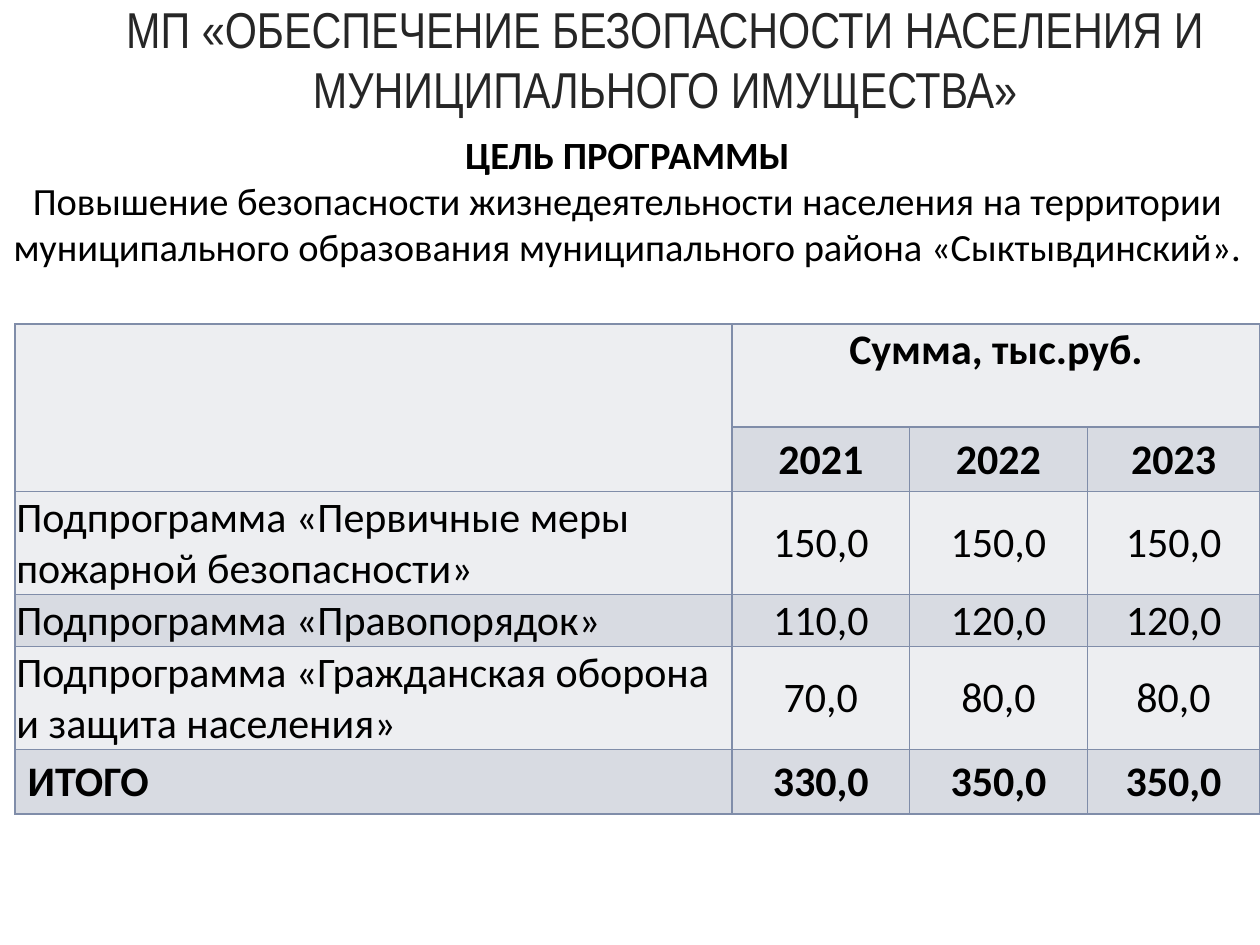
from dataclasses import dataclass

from lxml import etree
from pptx import Presentation
from pptx.dml.color import RGBColor
from pptx.enum.text import MSO_ANCHOR, PP_ALIGN
from pptx.oxml.ns import qn
from pptx.util import Inches, Pt

LEFT, CENTER = PP_ALIGN.LEFT, PP_ALIGN.CENTER
TOP, MIDDLE, BOTTOM = MSO_ANCHOR.TOP, MSO_ANCHOR.MIDDLE, MSO_ANCHOR.BOTTOM


@dataclass(frozen=True)
class Theme:
    title_font: str = "Arial Narrow"
    body_font: str = "Calibri"
    title_size: float = 28.8
    goal_size: float = 22
    table_size: float = 24
    title_color: str = "262626"
    text_color: str = "000000"
    border_color: str = "808DA9"
    border_width: float = 1
    bands: tuple[str, str] = ("EDEEF1", "D8DBE2")


@dataclass(frozen=True)
class Line:
    text: str
    font: str
    size: float
    color: str
    bold: bool = False
    align: PP_ALIGN = CENTER


@dataclass(frozen=True)
class BudgetRow:
    label: str
    amounts: tuple[str, str, str]
    height: float
    bold: bool = False


THEME = Theme()
COLUMN_WIDTHS = (5.69, 1.41, 1.41, 1.37)
TABLE_TITLE = "Сумма, тыс.руб."
TITLE_HEIGHT = 0.82
ROWS = (
    BudgetRow("", ("2021", "2022", "2023"), 0.51, bold=True),
    BudgetRow("Подпрограмма «Первичные меры пожарной безопасности»",
              ("150,0", "150,0", "150,0"), 0.82),
    BudgetRow("Подпрограмма «Правопорядок»", ("110,0", "120,0", "120,0"), 0.41),
    BudgetRow("Подпрограмма «Гражданская оборона и защита населения»",
              ("70,0", "80,0", "80,0"), 0.82),
    BudgetRow("ИТОГО", ("330,0", "350,0", "350,0"), 0.51, bold=True),
)


def write_line(paragraph, line: Line) -> None:
    paragraph.text = line.text
    paragraph.alignment = line.align
    font = paragraph.font
    font.name, font.size, font.bold = line.font, Pt(line.size), line.bold
    font.color.rgb = RGBColor.from_string(line.color)


def add_text(slide, box: tuple[float, ...], lines: list[Line], anchor: MSO_ANCHOR) -> None:
    frame = slide.shapes.add_textbox(*map(Inches, box)).text_frame
    frame.word_wrap = True
    frame.vertical_anchor = anchor
    for index, line in enumerate(lines):
        write_line(frame.add_paragraph() if index else frame.paragraphs[0], line)


def style_cell(cell, fill: str) -> None:
    properties = cell._tc.get_or_add_tcPr()
    for side in ("lnL", "lnR", "lnT", "lnB"):
        border = etree.SubElement(properties, qn(f"a:{side}"), w=str(Pt(THEME.border_width)))
        solid = etree.SubElement(border, qn("a:solidFill"))
        etree.SubElement(solid, qn("a:srgbClr"), val=THEME.border_color)
    cell.fill.solid()
    cell.fill.fore_color.rgb = RGBColor.from_string(fill)


def fill_cell(cell, text: str, bold: bool, align: PP_ALIGN = CENTER,
              anchor: MSO_ANCHOR = MIDDLE) -> None:
    cell.margin_left = cell.margin_right = cell.margin_top = Inches(0.01)
    cell.margin_bottom = 0
    cell.vertical_anchor = anchor
    write_line(cell.text_frame.paragraphs[0],
               Line(text, THEME.body_font, THEME.table_size, THEME.text_color, bold, align))


def add_budget_table(slide) -> None:
    heights = [TITLE_HEIGHT] + [row.height for row in ROWS]
    frame = slide.shapes.add_table(
        len(heights), len(COLUMN_WIDTHS), Inches(0.12), Inches(2.57),
        Inches(sum(COLUMN_WIDTHS)), Inches(sum(heights)))
    table = frame.table
    for column, width in zip(table.columns, COLUMN_WIDTHS):
        column.width = Inches(width)
    for row_index, height in enumerate(heights):
        table.rows[row_index].height = Inches(height)
        for column_index in range(len(COLUMN_WIDTHS)):
            in_corner = row_index == 1 and column_index == 0
            band = THEME.bands[0 if in_corner else row_index % 2]
            style_cell(table.cell(row_index, column_index), band)

    # Merged header cells
    table.cell(0, 0).merge(table.cell(1, 0))
    table.cell(0, 1).merge(table.cell(0, 3))
    fill_cell(table.cell(0, 1), TABLE_TITLE, True, anchor=TOP)

    # Years, subprogrammes and total
    for row_index, row in enumerate(ROWS, start=1):
        if row.label:
            fill_cell(table.cell(row_index, 0), row.label, row.bold, LEFT)
        for column_index, amount in enumerate(row.amounts, start=1):
            fill_cell(table.cell(row_index, column_index), amount, row.bold)
    table.cell(len(ROWS), 0).margin_left = Inches(0.1)


def main() -> None:
    presentation = Presentation()
    presentation.slide_width, presentation.slide_height = Inches(10), Inches(7.5)
    slide = presentation.slides.add_slide(presentation.slide_layouts[6])

    # Title
    add_text(slide, (0.56, 0, 9.44, 0.99), [
        Line("МП «ОБЕСПЕЧЕНИЕ БЕЗОПАСНОСТИ НАСЕЛЕНИЯ И МУНИЦИПАЛЬНОГО ИМУЩЕСТВА»",
             THEME.title_font, THEME.title_size, THEME.title_color),
    ], BOTTOM)

    add_budget_table(slide)

    # Programme goal
    add_text(slide, (-0.02, 0.99, 10, 1.21), [
        Line("ЦЕЛЬ ПРОГРАММЫ", THEME.body_font, THEME.goal_size, THEME.text_color, bold=True),
        Line("Повышение безопасности жизнедеятельности населения на территории "
             "муниципального образования муниципального района «Сыктывдинский».",
             THEME.body_font, THEME.goal_size, THEME.text_color),
    ], TOP)

    presentation.save("out.pptx")


if __name__ == "__main__":
    main()
